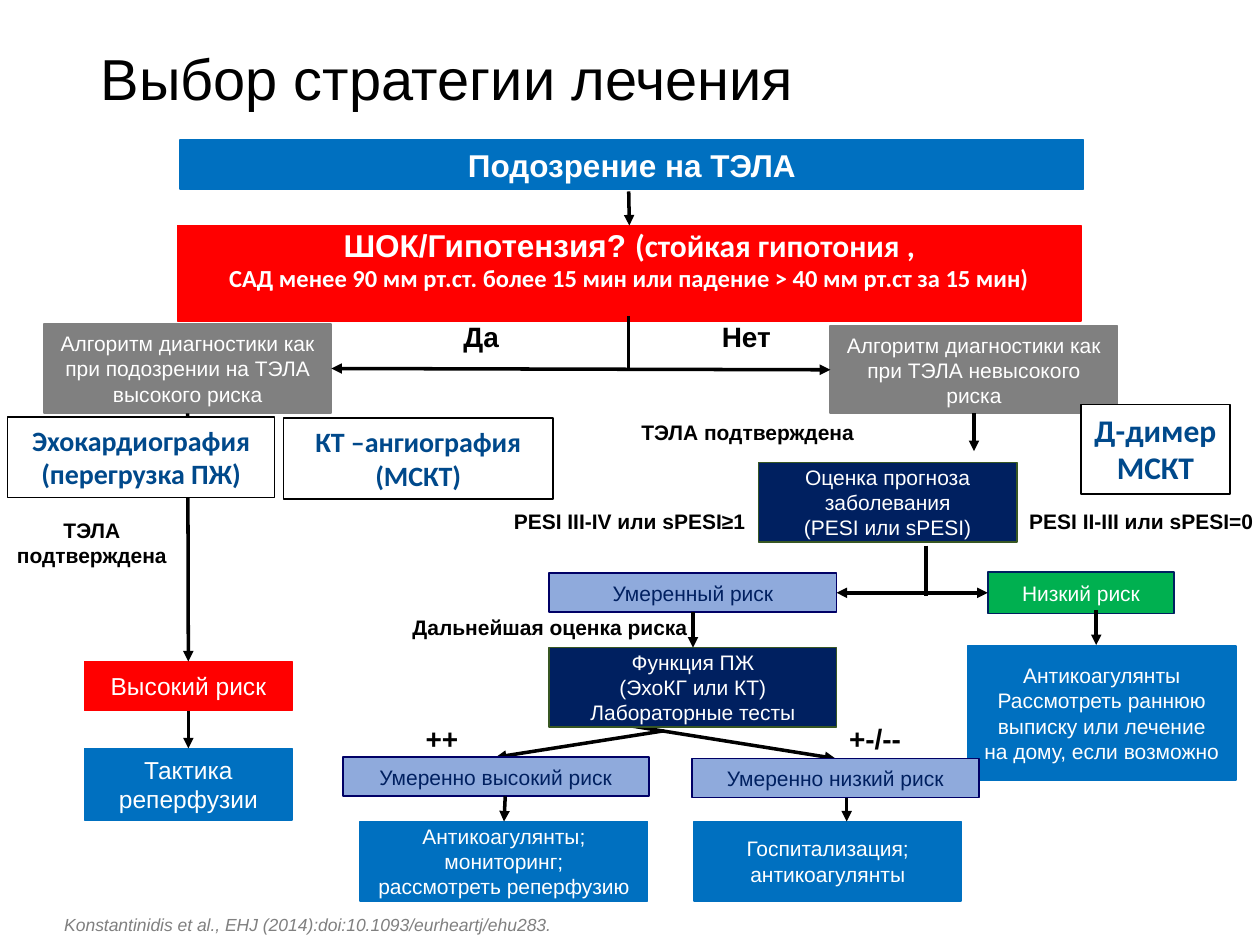
import pptx
import pptx.dml.color
import pptx.enum.shapes
import pptx.enum.text
import pptx.oxml.ns
import pptx.util
from lxml import etree

ALIGN = pptx.enum.text.PP_ALIGN
ANCHOR = pptx.enum.text.MSO_ANCHOR
TOP, LEFT, BOTTOM, RIGHT = range(4)
BLUE, NAVY, RED, GREY = "0070C0", "002060", "FF0000", "808080"
WHITE, BLACK, PALE, INK = "FFFFFF", "000000", "8FAADC", "000066"
GREEN, OLIVE, TEAL = "00B050", "385723", "00498B"


def color(value):
    """Turn a hex string into a colour."""
    return pptx.dml.color.RGBColor.from_string(value)


def write(para, text, size=12, ink=BLACK, bold=False, italic=False, font="Arial"):
    """Add one formatted span to a paragraph."""
    span = para.add_run()
    span.text = text
    span.font.size = pptx.util.Pt(size)
    span.font.name = font
    span.font.bold = bold
    span.font.italic = italic
    span.font.color.rgb = color(ink)


class Flowchart:
    """Draw flowchart elements on a page with a grid of 100 columns by 75 rows."""

    def __init__(self):
        """Open a deck with one blank page."""
        self.deck = pptx.Presentation()
        self.deck.slide_width = pptx.util.Inches(10)
        self.deck.slide_height = pptx.util.Inches(7.5)
        self.page = self.deck.slides.add_slide(self.deck.slide_layouts[6])
        self.column = self.deck.slide_width / 100
        self.row = self.deck.slide_height / 75

    def place(self, *lengths):
        """Convert alternating columns and rows to slide units."""
        return [round(length * unit) for length, unit in zip(lengths, (self.column, self.row) * 2)]

    def fill_text(self, box, text, align, anchor, wrap, **style):
        """Write each line of the text as one paragraph."""
        frame = box.text_frame
        frame.word_wrap = wrap
        frame.vertical_anchor = anchor
        for index, line in enumerate(text.split("\n")):
            para = frame.add_paragraph() if index else frame.paragraphs[0]
            para.alignment = align
            write(para, line, **style)

    def box(self, at, text, fill, edge=None, align=ALIGN.CENTER, anchor=ANCHOR.MIDDLE,
            wrap=True, **style):
        """Add a filled rectangle with centred text."""
        box = self.page.shapes.add_shape(pptx.enum.shapes.MSO_SHAPE.RECTANGLE, *self.place(*at))
        box.shadow.inherit = False
        box.fill.solid()
        box.fill.fore_color.rgb = color(fill)
        box.line.color.rgb = color(edge or fill)
        box.line.width = pptx.util.Pt(1)
        self.fill_text(box, text, align, anchor, wrap, **{"ink": WHITE, **style})
        return box

    def label(self, at, text, align=ALIGN.LEFT, anchor=ANCHOR.TOP, wrap=True, **style):
        """Add a text box, bold by default."""
        box = self.page.shapes.add_textbox(*self.place(*at))
        self.fill_text(box, text, align, anchor, wrap, **{"bold": True, **style})
        return box

    def line(self, points, heads=("tail",), begin=None, end=None):
        """Add a straight connector with arrowheads and optional joints."""
        line = self.page.shapes.add_connector(
            pptx.enum.shapes.MSO_CONNECTOR.STRAIGHT, *self.place(*points))
        line.line.color.rgb = color(BLACK)
        line.line.width = pptx.util.Pt(2)
        for head in heads:
            etree.SubElement(line.line._get_or_add_ln(),
                             pptx.oxml.ns.qn(f"a:{head}End"), type="triangle")
        etree.SubElement(line._element.spPr, pptx.oxml.ns.qn("a:effectLst"))
        if begin:
            line.begin_connect(*begin)
        if end:
            line.end_connect(*end)
        return line


def build():
    """Build the treatment strategy page."""
    chart = Flowchart()
    box, label, line = chart.box, chart.label, chart.line
    both = ("head", "tail")

    to_lower = line((50, 57.6, 66.3, 60.2))
    to_higher = line((52.7, 58, 39.3, 60.1))
    line((73.5, 43.3, 73.5, 47.3), heads=())

    title = label((7, -0.8, 86.2, 14.5), "Выбор стратегии лечения",
                  anchor=ANCHOR.MIDDLE, size=33, bold=False)
    title.text_frame.paragraphs[0].line_spacing = 0.9

    box((14.3, 11.1, 71.7, 3.9), "Подозрение на ТЭЛА", BLUE, size=18, bold=True)
    shock = box((14.1, 17.9, 71.7, 7.6), "ШОК/Гипотензия? ", RED,
                anchor=ANCHOR.TOP, size=18, bold=True)
    shock.text_frame.margin_top = 0
    criteria = {"ink": WHITE, "bold": True, "font": "Calibri"}
    write(shock.text_frame.paragraphs[0], "(стойкая гипотония ,", size=18, **criteria)
    para = shock.text_frame.add_paragraph()
    para.alignment = ALIGN.CENTER
    write(para, "САД менее 90 мм рт.ст. более 15 мин или падение > 40 мм рт.ст за 15 мин)",
          size=14, **criteria)

    high_path = box((3.5, 25.7, 22.8, 7.1),
                    "Алгоритм диагностики как при подозрении на ТЭЛА высокого риска", GREY)
    low_path = box((65.9, 25.9, 22.8, 6.9),
                   "Алгоритм диагностики как при ТЭЛА невысокого риска", GREY)
    box((60.2, 36.7, 20.5, 6.3), "Оценка прогноза заболевания\n(PESI или sPESI)", NAVY, OLIVE)
    moderate = box((43.6, 45.5, 22.8, 3.1), "Умеренный риск", PALE, INK, ink=NAVY)
    tests = box((43.6, 51.4, 22.8, 6.3),
                "Функция ПЖ\n(ЭхоКГ или КТ)\nЛабораторные тесты", NAVY, OLIVE)
    low = box((78.4, 45.4, 14.8, 3.3), "Низкий риск", GREEN, NAVY)
    box((76.8, 51.3, 21.3, 10.6),
        "Антикоагулянты\nРассмотреть раннюю\nвыписку или лечение\nна дому, если возможно", BLUE)
    high = box((6.7, 52.5, 16.5, 3.9), "Высокий риск", RED, size=14)
    reperfusion = box((6.7, 59.4, 16.5, 5.7), "Тактика реперфузии", BLUE, size=14)
    higher = box((27.2, 60.1, 24.3, 3.1), "Умеренно высокий риск", PALE, INK, ink=NAVY)
    lower = box((54.9, 60.2, 22.8, 3.1), "Умеренно низкий риск", PALE, INK, ink=NAVY)
    monitoring = box((28.6, 65.2, 22.8, 6.3),
                     "Антикоагулянты; мониторинг;\nрассмотреть реперфузию", BLUE)
    box((55.1, 65.2, 21.2, 6.3), "Госпитализация;\nантикоагулянты", BLUE)

    to_lower.end_connect(lower, TOP)
    to_higher.end_connect(higher, TOP)
    line((49.9, 15.2, 49.9, 18), end=(shock, TOP))
    line((49.9, 25.1, 49.9, 29.3), heads=())
    line((26.4, 29.2, 65.9, 29.3), both, (high_path, RIGHT), (low_path, LEFT))
    line((15, 32.8, 15, 52.5), begin=(high_path, BOTTOM), end=(high, TOP))
    line((15, 56.6, 15, 59.4), begin=(high, BOTTOM), end=(reperfusion, TOP))
    line((77.3, 32.8, 77.3, 35.8), begin=(low_path, BOTTOM))
    line((66.4, 47.1, 78.4, 47.1), both, (moderate, RIGHT), (low, LEFT))
    line((55, 48.6, 55, 51.4), begin=(moderate, BOTTOM), end=(tests, TOP))
    line((40.1, 63.2, 40.1, 65.2), end=(monitoring, TOP))
    line((67.2, 63.3, 67.2, 65.2))
    line((87, 48.4, 87, 51.2))

    label((35.8, 24.9, 4.8, 3.7), "Да", wrap=False, size=16)
    label((56.3, 24.9, 5.9, 3.7), "Нет", wrap=False, size=16)
    label((0.3, 40.6, 14, 5.1), "ТЭЛА\nподтверждена", ALIGN.CENTER, wrap=False)
    label((39.8, 39.9, 21.3, 3), "PESI III-IV или sPESI≥1")
    label((80.7, 39.9, 20.5, 3), "PESI II-III или sPESI=0")
    label((48.1, 32.8, 22.5, 3), "ТЭЛА подтверждена", ALIGN.CENTER)
    label((32.8, 56.8, 6.2, 3.7), "++", size=16)
    label((66.4, 56.8, 8.6, 3.7), "+-/--", size=16)
    label((30.9, 48.3, 25.5, 3), "Дальнейшая оценка риска", ALIGN.CENTER)
    citation = label((4.7, 72.1, 47.3, 2.5),
                     "Konstantinidis et al., EHJ (2014):doi:10.1093/eurheartj/ehu283.",
                     anchor=ANCHOR.BOTTOM, size=10, ink=GREY, bold=False, italic=True)
    for side in ("left", "top", "right", "bottom"):
        setattr(citation.text_frame, f"margin_{side}", pptx.util.Inches(0.04))

    method = {"fill": WHITE, "edge": BLACK, "anchor": ANCHOR.TOP,
              "ink": TEAL, "bold": True, "font": "Calibri"}
    box((0.6, 33.1, 21.2, 6.4), "Эхокардиография\n(перегрузка ПЖ)", size=16, **method)
    box((22.5, 33.2, 21.4, 6.4), "КТ –ангиография (МСКТ)", size=16, **method)
    box((85.8, 32.1, 11.8, 7.1), "Д-димер\nМСКТ", wrap=False, size=18, **method)

    chart.deck.save("out.pptx")


if __name__ == "__main__":
    build()
